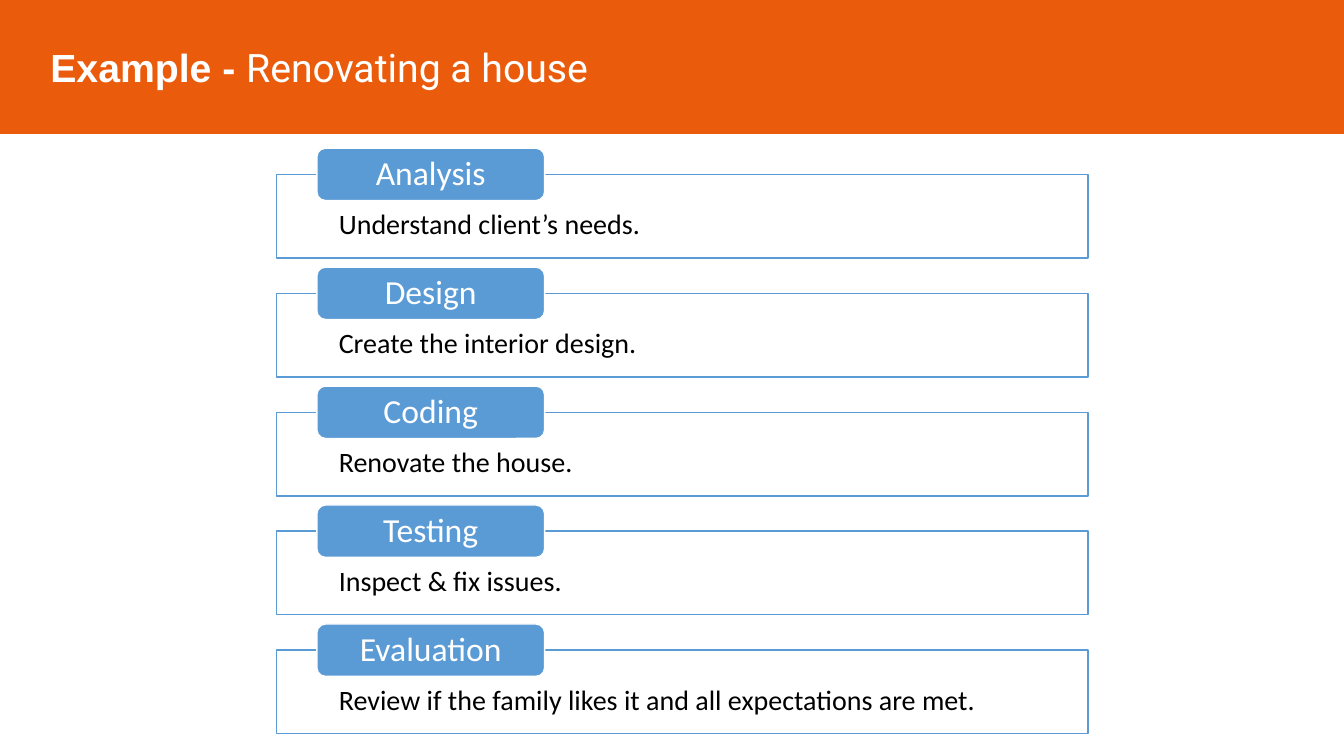
import pptx
import pptx.dml.color
import pptx.enum.shapes
import pptx.enum.text
import pptx.oxml.ns
import pptx.util
from dataclasses import dataclass
from lxml import etree

SHAPES = pptx.enum.shapes.MSO_SHAPE
ALIGN = pptx.enum.text.PP_ALIGN
ANCHOR = pptx.enum.text.MSO_ANCHOR


@dataclass(frozen=True)
class Theme:
    orange: str = "EA5B0C"
    blue: str = "5B9BD5"
    white: str = "FFFFFF"
    black: str = "000000"
    title_font: str = "Arial"
    subtitle_font: str = "Roboto"
    body_font: str = "Calibri"
    title_size: int = 28
    label_size: int = 24
    body_size: int = 20


THEME = Theme()

# Grid in inches: one row per phase, the label straddling its panel's top edge
WIDTH, HEIGHT = 13.33, 7.5
BANNER_HEIGHT = 1.32
FIRST_ROW, ROW_PITCH = 1.73, 1.18
PANEL_LEFT, PANEL_WIDTH, PANEL_HEIGHT = 2.74, 8.05, 0.83
LABEL_WIDTH, LABEL_HEIGHT = 2.26, 0.52
LABEL_LEFT = PANEL_LEFT + 0.05 * PANEL_WIDTH

PHASES = [
    ("Analysis", "Understand client’s needs."),
    ("Design", "Create the interior design."),
    ("Coding", "Renovate the house."),
    ("Testing", "Inspect & fix issues."),
    ("Evaluation", "Review if the family likes it and all expectations are met."),
]


def rgb(colour):
    return pptx.dml.color.RGBColor.from_string(colour)


def add_box(slide, preset, place, fill, line, insets, anchor):
    """Add a filled, outlined shape and set up its text frame."""
    box = slide.shapes.add_shape(preset, *map(pptx.util.Inches, place))
    box.shadow.inherit = False
    box.fill.solid()
    box.fill.fore_color.rgb = rgb(fill)
    box.line.color.rgb = rgb(line)
    box.line.width = pptx.util.Pt(1)
    frame = box.text_frame
    frame.word_wrap = True
    frame.vertical_anchor = anchor
    (frame.margin_left, frame.margin_top,
     frame.margin_right, frame.margin_bottom) = map(pptx.util.Inches, insets)
    return box


def add_run(paragraph, text, font, size, colour, bold=False):
    run = paragraph.add_run()
    run.text = text
    run.font.name = font
    run.font.size = pptx.util.Pt(size)
    run.font.color.rgb = rgb(colour)
    run.font.bold = bold


def set_opacity(box, percent):
    colour = box._element.spPr.find(".//" + pptx.oxml.ns.qn("a:srgbClr"))
    alpha = etree.SubElement(colour, pptx.oxml.ns.qn("a:alpha"))
    alpha.set("val", str(percent * 1000))


def add_banner(slide):
    banner = add_box(slide, SHAPES.RECTANGLE, (0, 0, WIDTH, BANNER_HEIGHT),
                     THEME.orange, THEME.orange, (0.5, 0.05, 0.1, 0.05), ANCHOR.MIDDLE)
    heading = banner.text_frame.paragraphs[0]
    heading.alignment = ALIGN.LEFT
    add_run(heading, "Example - ", THEME.title_font, THEME.title_size, THEME.white, bold=True)
    add_run(heading, "Renovating a house", THEME.subtitle_font, THEME.title_size, THEME.white)


def add_phase(slide, row, name, task):
    top = FIRST_ROW + row * ROW_PITCH

    # Outlined panel with the task
    panel = add_box(slide, SHAPES.RECTANGLE, (PANEL_LEFT, top, PANEL_WIDTH, PANEL_HEIGHT),
                    THEME.white, THEME.blue, (0.62, 0.36, 0.62, 0.1), ANCHOR.TOP)
    set_opacity(panel, 90)
    description = panel.text_frame.paragraphs[0]
    description.alignment = ALIGN.LEFT
    description.line_spacing = 0.9
    add_run(description, task, THEME.body_font, THEME.body_size, THEME.black)

    # Rounded label with the phase name
    label = add_box(slide, SHAPES.ROUNDED_RECTANGLE,
                    (LABEL_LEFT, top - LABEL_HEIGHT / 2, LABEL_WIDTH, LABEL_HEIGHT),
                    THEME.blue, THEME.white, (0.21, 0, 0.21, 0), ANCHOR.MIDDLE)
    title = label.text_frame.paragraphs[0]
    title.alignment = ALIGN.CENTER
    title.line_spacing = 0.9
    add_run(title, name, THEME.body_font, THEME.label_size, THEME.white)


def main():
    deck = pptx.Presentation()
    deck.slide_width = pptx.util.Inches(WIDTH)
    deck.slide_height = pptx.util.Inches(HEIGHT)
    slide = deck.slides.add_slide(deck.slide_layouts[6])

    add_banner(slide)
    for row, (name, task) in enumerate(PHASES):
        add_phase(slide, row, name, task)

    deck.save("out.pptx")


if __name__ == "__main__":
    main()
